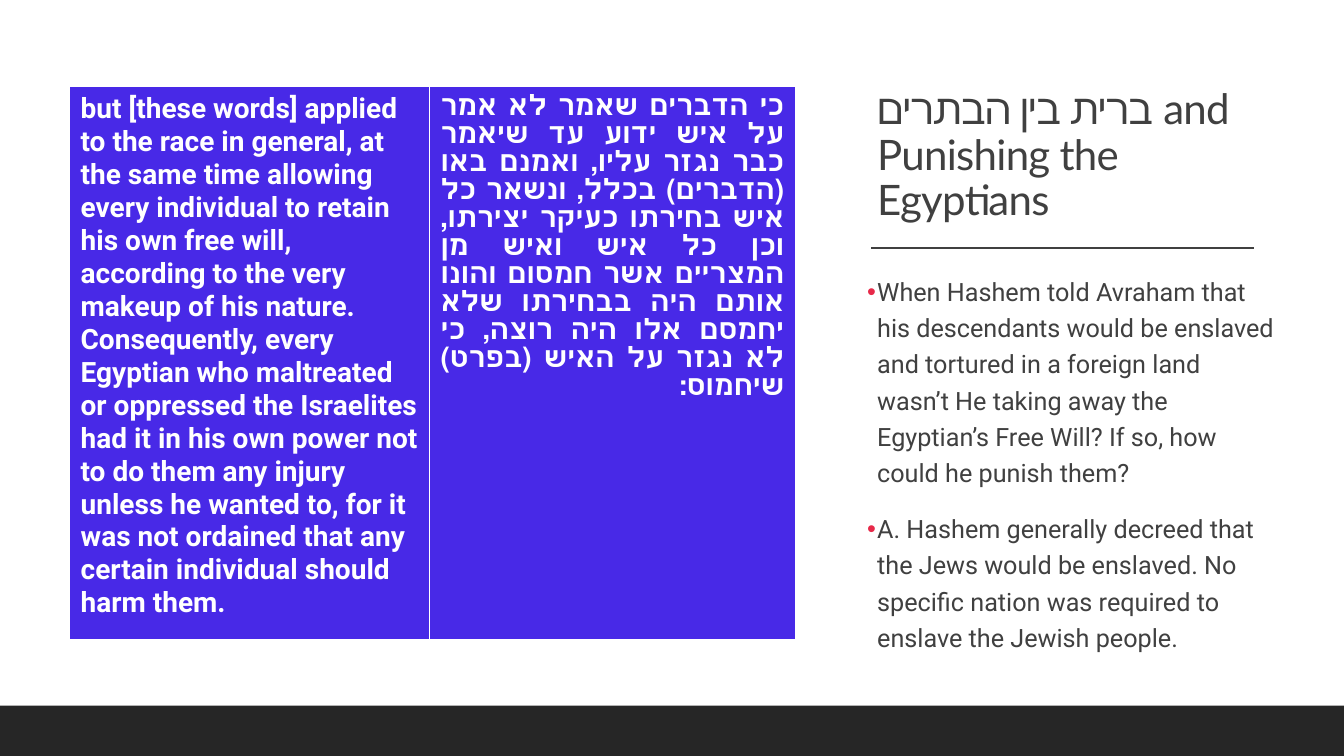
"""Build the slide on the covenant and the punishment of the Egyptians."""
from lxml.etree import SubElement as Sub
from pptx import Presentation
from pptx.dml.color import RGBColor
from pptx.enum.shapes import MSO_CONNECTOR as Link, MSO_SHAPE as Shape
from pptx.enum.text import MSO_ANCHOR as Anchor, MSO_AUTO_SIZE as Auto, PP_ALIGN as Align
from pptx.oxml.ns import qn
from pptx.util import Inches, Pt

HEAD = "ברית בין הבתרים and Punishing the Egyptians"
POINTS = [
    "When Hashem told Avraham that his descendants would be enslaved and tortured "
    "in a foreign land wasn’t He taking away the Egyptian’s Free Will? If so, how "
    "could he punish them?",
    "A. Hashem generally decreed that the Jews would be enslaved. No specific "
    "nation was required to enslave the Jewish people.",
]
ENGLISH = (
    "but [these words] applied to the race in general, at the same time allowing "
    "every individual to retain his own free will, according to the very makeup of "
    "his nature. Consequently, every Egyptian who maltreated or oppressed the "
    "Israelites had it in his own power not to do them any injury unless he wanted "
    "to, for it was not ordained that any certain individual should harm them."
)
HEBREW = (
    "כי הדברים שאמר לא אמר על איש ידוע עד שיאמר כבר נגזר עליו, ואמנם באו "
    "(הדברים) בכלל, ונשאר כל איש בחירתו כעיקר יצירתו, וכן כל איש ואיש מן "
    "המצריים אשר חמסום והונו אותם היה בבחירתו שלא יחמסם אלו היה רוצה, כי לא "
    "נגזר על האיש (בפרט) שיחמוס:"
)
VERSES = [(ENGLISH, 3.57, False), (HEBREW, 3.63, True)]
EDGES = {"lnL": 1, "lnR": 1, "lnT": 1, "lnB": 3}
WIDE, HIGH, BAND = 13.33, 7.5, 0.5
SIDE, SPAN = 8.6, 4.04
WHITE, INK, DARK, BLUE, RED = "FFFFFF", "404040", "262626", "4829E7", "E72949"


def paint(fill, color):
    fill.solid()
    fill.fore_color.rgb = RGBColor.from_string(color)


def style(par, face, size, color, bold=False):
    font = par.font
    font.name, font.size, font.bold = face, Pt(size), bold
    font.color.rgb = RGBColor.from_string(color)


def place(shape, *box):
    shape.left, shape.top, shape.width, shape.height = map(Inches, box)


def block(slide, top, high, color):
    shape = slide.shapes.add_shape(
        Shape.RECTANGLE, 0, Inches(top), Inches(WIDE), Inches(high))
    shape.shadow.inherit = False
    paint(shape.fill, color)
    shape.line.fill.background()
    return shape


def add_title(slide):
    title = slide.shapes.title
    place(title, SIDE, 0.69, SPAN, 1.59)
    frame = title.text_frame
    frame.text = HEAD
    frame.word_wrap, frame.auto_size = True, Auto.NONE
    frame.vertical_anchor = Anchor.BOTTOM
    par = frame.paragraphs[0]
    par.alignment, par.line_spacing = Align.LEFT, 0.9
    style(par, "Lato", 30, INK)
    par._p.pPr.find(qn("a:defRPr")).set("spc", "-50")


def add_points(slide):
    body = slide.placeholders[1]
    place(body, SIDE, 2.63, SPAN, 3.79)
    frame = body.text_frame
    frame.text = "\n".join(POINTS)
    frame.word_wrap, frame.auto_size = True, Auto.NONE
    frame.margin_left = frame.margin_right = 0
    for par in frame.paragraphs:
        par.line_spacing, par.space_before, par.space_after = 1.2, Pt(12), Pt(2)
        props = par._p.get_or_add_pPr()
        props.set("marL", str(Inches(0.1)))
        props.set("indent", str(Inches(-0.1)))
        Sub(Sub(props, qn("a:buClr")), qn("a:srgbClr"), val=RED)
        Sub(props, qn("a:buChar"), char="•")
        style(par, "Roboto", 18, INK)


def add_verses(slide):
    total = sum(wide for _, wide, _ in VERSES)
    table = slide.shapes.add_table(
        1, len(VERSES), Inches(0.69), Inches(0.86), Inches(total), Inches(5.5)).table
    for col, (text, wide, rtl) in enumerate(VERSES):
        table.columns[col].width = Inches(wide)
        cell = table.cell(0, col)
        cell.text = text
        cell.margin_left = cell.margin_right = Inches(0.11)
        cell.margin_top = cell.margin_bottom = Inches(0.06)
        par = cell.text_frame.paragraphs[0]
        if rtl:
            par.alignment = Align.JUSTIFY
            par._p.get_or_add_pPr().set("rtl", "1")
        style(par, "Roboto", 20, WHITE, True)
        props = cell._tc.get_or_add_tcPr()
        for edge, size in EDGES.items():
            line = Sub(props, qn("a:" + edge), w=str(Pt(size)))
            Sub(Sub(line, qn("a:solidFill")), qn("a:srgbClr"), val=WHITE)
        paint(cell.fill, BLUE)


def add_rule(slide):
    rule = slide.shapes.add_connector(
        Link.STRAIGHT, Inches(8.64), Inches(2.46), Inches(12.44), Inches(2.46))
    paint(rule.line.fill, INK)
    rule.line.width = Pt(1)
    Sub(rule._element.spPr, qn("a:effectLst"))


def main():
    deck = Presentation()
    deck.slide_width, deck.slide_height = Inches(WIDE), Inches(HIGH)
    slide = deck.slides.add_slide(deck.slide_layouts[1])
    back = block(slide, 0, HIGH, WHITE)
    slide.shapes.title._element.addprevious(back._element)
    add_title(slide)
    add_rule(slide)
    add_points(slide)
    block(slide, HIGH - BAND, BAND, DARK)
    add_verses(slide)
    deck.save("out.pptx")


if __name__ == "__main__":
    main()
